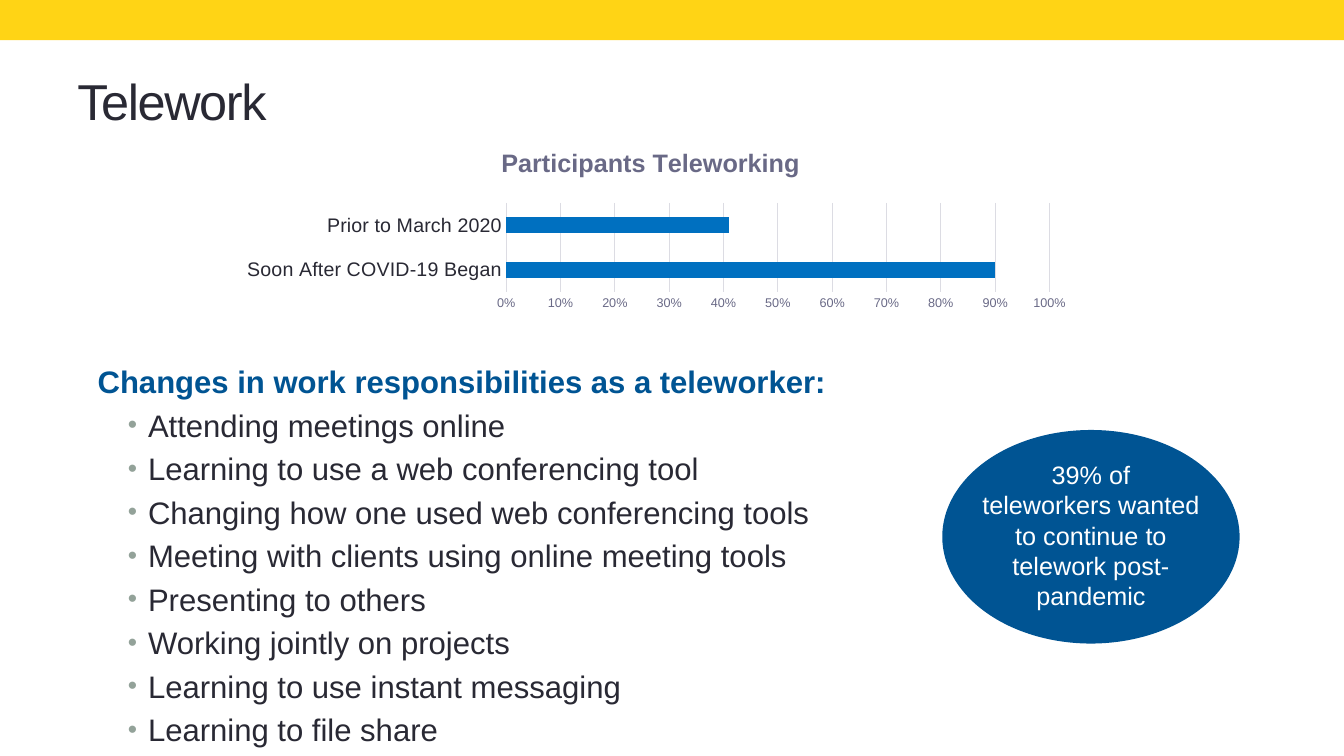
import pptx
import pptx.chart.data
import pptx.dml.color
import pptx.enum.chart
import pptx.enum.shapes
import pptx.enum.text
import pptx.oxml
import pptx.oxml.ns
import pptx.util
from lxml import etree

Inches, Pt = pptx.util.Inches, pptx.util.Pt
COLORS = {
    "band": "FFD415", "ink": "292934", "navy": "005493", "bullet": "93A299",
    "bar": "0070C0", "grid": "DCDCE3", "muted": "696986", "white": "FFFFFF",
}
WIDTH, HEIGHT = 13.33, 7.5
CHANGES = [
    "Attending meetings online",
    "Learning to use a web conferencing tool",
    "Changing how one used web conferencing tools",
    "Meeting with clients using online meeting tools",
    "Presenting to others",
    "Working jointly on projects",
    "Learning to use instant messaging",
    "Learning to file share",
]


def color(name):
    return pptx.dml.color.RGBColor.from_string(COLORS[name])


def style(font, size, name, bold=False):
    font.name, font.size, font.bold = "Arial", Pt(size), bold
    font.color.rgb = color(name)


deck = pptx.Presentation()
deck.slide_width, deck.slide_height = Inches(WIDTH), Inches(HEIGHT)
page = deck.slides.add_slide(deck.slide_layouts[6])
shapes = page.shapes

# Top band and callout ellipse
for kind, place, fill in [
    (pptx.enum.shapes.MSO_SHAPE.RECTANGLE, (0, 0, WIDTH, 0.4), "band"),
    (pptx.enum.shapes.MSO_SHAPE.OVAL, (9.36, 4.28, 2.92, 2.09), "navy"),
]:
    shape = shapes.add_shape(kind, *map(Inches, place))
    shape.shadow.inherit = False
    shape.fill.solid()
    shape.fill.fore_color.rgb = color(fill)
    shape.line.color.rgb = color(fill)
    shape.line.width = Pt(2.08)
    if fill == "band":
        shape.line.fill.background()

# Text frames: title, list and callout
frames = {}
for name, place in {
    "title": (0.67, 0.46, 12, 1.08),
    "changes": (0.87, 3.55, 8.2, 3.95),
    "callout": (9.6, 4.51, 2.44, 1.62),
}.items():
    frames[name] = shapes.add_textbox(*map(Inches, place)).text_frame
    frames[name].word_wrap = True

frames["title"].vertical_anchor = pptx.enum.text.MSO_ANCHOR.MIDDLE
span = frames["title"].paragraphs[0].add_run()
span.text = "Telework"
style(span.font, 36, "ink")
span.font._element.set("spc", "-100")

para = frames["changes"].paragraphs[0]
span = para.add_run()
span.text = "Changes in work responsibilities as a teleworker:"
style(span.font, 22.2, "navy", bold=True)
for change in CHANGES:
    para = frames["changes"].add_paragraph()
    para.level = 1
    para.space_before = Pt(4.4)
    span = para.add_run()
    span.text = change
    style(span.font, 22.2, "ink")
    properties = para._p.get_or_add_pPr()
    properties.set("marL", str(Inches(0.5)))
    properties.set("indent", str(Inches(-0.2)))
    bullet_color = etree.SubElement(properties, pptx.oxml.ns.qn("a:buClr"))
    etree.SubElement(bullet_color, pptx.oxml.ns.qn("a:srgbClr"), val=COLORS["bullet"])
    etree.SubElement(properties, pptx.oxml.ns.qn("a:buSzPct"), val="85000")
    etree.SubElement(properties, pptx.oxml.ns.qn("a:buFont"), typeface="Arial")
    etree.SubElement(properties, pptx.oxml.ns.qn("a:buChar"), char="•")

callout = frames["callout"]
for para, lines in [
    (callout.paragraphs[0], ["39% of"]),
    (callout.add_paragraph(),
     ["teleworkers wanted", "to continue to", "telework post-pandemic"]),
]:
    para.alignment = pptx.enum.text.PP_ALIGN.CENTER
    for number, line in enumerate(lines):
        if number:
            para.add_line_break()
        span = para.add_run()
        span.text = line
        style(span.font, 18, "white")

# Bar chart
data = pptx.chart.data.CategoryChartData(number_format="0%")
data.categories = ["Soon After COVID-19 Began", "Prior to March 2020"]
data.add_series("Series 1", [0.9, 0.41])
chart = shapes.add_chart(
    pptx.enum.chart.XL_CHART_TYPE.BAR_CLUSTERED,
    *map(Inches, (2.28, 1.17, 8.46, 1.95)), data).chart
style(chart.font, 10, "ink")
chart.has_legend = False
chart.has_title = True
span = chart.chart_title.text_frame.paragraphs[0].add_run()
span.text = "Participants Teleworking"
style(span.font, 18, "muted", bold=True)
chart.chart_title.include_in_layout = False

plot = chart.plots[0]
plot.gap_width = 182
plot.vary_by_categories = False
bars = plot.series[0].format.fill
bars.solid()
bars.fore_color.rgb = color("bar")

for axis, size, ink in [(chart.category_axis, 14, "ink"), (chart.value_axis, 9, "muted")]:
    axis.major_tick_mark = axis.minor_tick_mark = pptx.enum.chart.XL_TICK_MARK.NONE
    style(axis.tick_labels.font, size, ink)
chart.category_axis.format.line.color.rgb = color("grid")
chart.category_axis.format.line.width = Pt(0.75)
values = chart.value_axis
values.minimum_scale, values.maximum_scale, values.major_unit = 0, 1, 0.1
values.tick_labels.number_format = "0%"
values.tick_labels.number_format_is_linked = False
values.format.line.fill.background()
values.major_gridlines.format.line.color.rgb = color("grid")
values.major_gridlines.format.line.width = Pt(0.75)

# Fixed places for the title and the plot, as shares of the chart
for owner, tags in [
    (chart.chart_title._element,
     {"xMode": "edge", "yMode": "edge", "x": 0.313, "y": 0.12}),
    (chart._chartSpace.chart.plotArea,
     {"layoutTarget": "inner", "xMode": "edge", "yMode": "edge",
      "x": 0.324, "y": 0.433, "w": 0.637, "h": 0.453}),
]:
    for old in owner.findall(pptx.oxml.ns.qn("c:layout")):
        owner.remove(old)
    layout = etree.Element(pptx.oxml.ns.qn("c:layout"))
    manual = etree.SubElement(layout, pptx.oxml.ns.qn("c:manualLayout"))
    for tag, value in tags.items():
        etree.SubElement(manual, pptx.oxml.ns.qn("c:" + tag), val=str(value))
    text = owner.find(pptx.oxml.ns.qn("c:tx"))
    owner.insert(0 if text is None else 1, layout)

deck.save("out.pptx")
